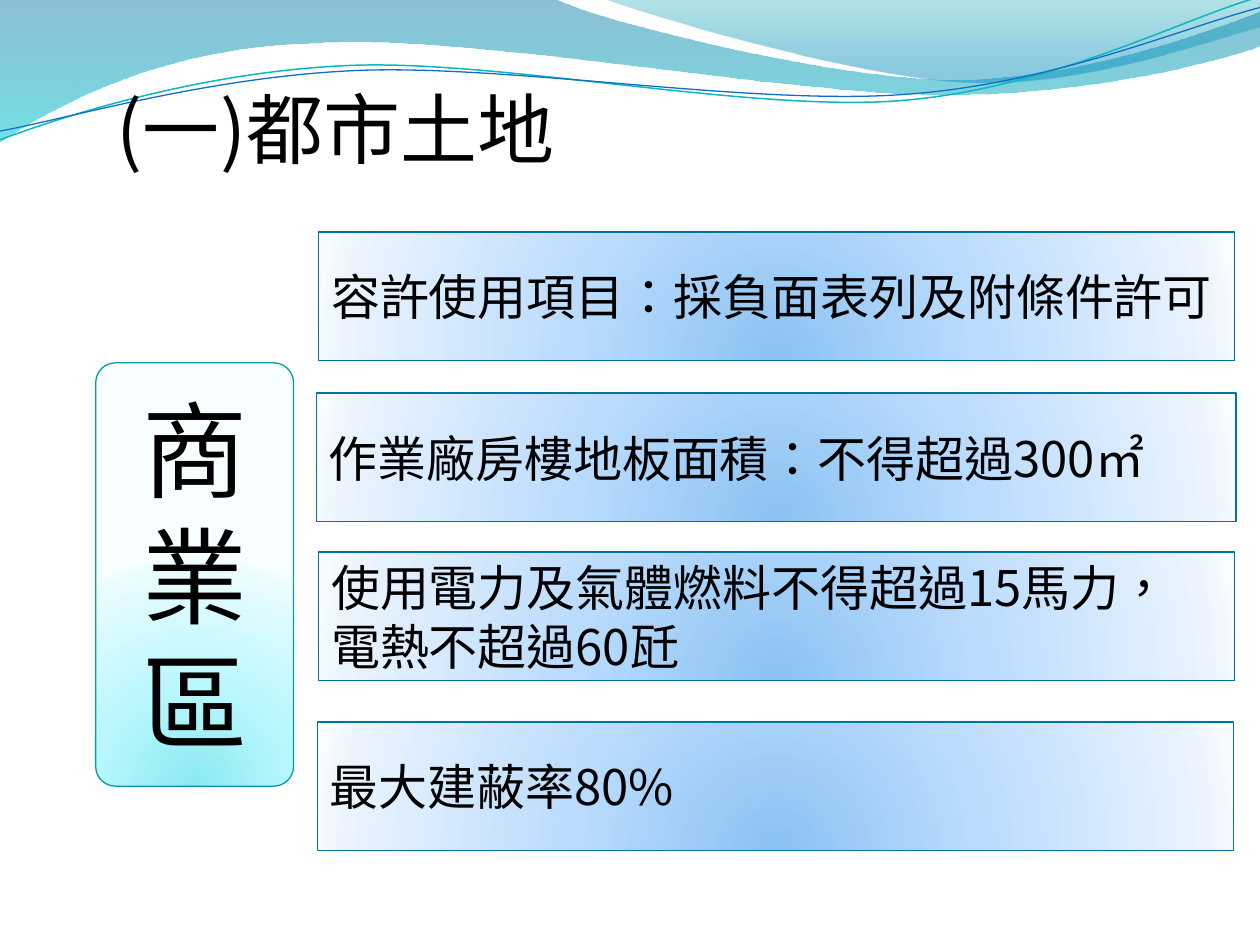
import math
from dataclasses import dataclass

from lxml import etree
from pptx import Presentation
from pptx import util as u
from pptx.dml.color import RGBColor
from pptx.enum import shapes, text
from pptx.oxml.ns import qn

WIDTH, HEIGHT = u.Inches(10), u.Inches(7.5)
FONT = "Noto Sans CJK SC"
RADIAL_STOPS = (0, 43, 93, 100)


@dataclass
class Wave:
    """Points in inches: a pair is a corner, six numbers are a Bézier segment."""
    points: list
    stops: tuple = ()  # (position %, colour, opacity %)
    line: str = ""
    weight: float = 0
    tilt: float = 0  # degrees clockwise
    pivot: tuple = (0, 0)


@dataclass
class Card:
    left: float
    top: float
    width: float
    height: float
    lines: list
    size: int = 28
    colours: tuple = ("8BC2F1", "B9DBFD", "EAF3FE", "F8FBFF")
    line: str = "0074A1"
    kind: int = shapes.MSO_SHAPE.RECTANGLE
    align: int = text.PP_ALIGN.LEFT


WAVES = [
    Wave([(0, 0), (4.4, -0.01), (4.76, 0.17, 6.64, 0.63, 7.58, 0.63),
          (8.53, 0.63, 9.58, 0.26, 10, 0.09), (10.01, 0.36),
          (9.83, 0.44, 8.7, 0.76, 7.46, 0.75), (6.22, 0.75, 3.82, 0.28, 2.57, 0.34),
          (1.29, 0.36, 0.46, 0.83, -0.01, 1.13), (0, 0)],
         stops=((0, "0074A1", 45), (100, "00C6CF", 55))),
    Wave([(4.79, -0.01), (5.09, 0.11, 6.82, 0.62, 7.69, 0.65),
          (8.56, 0.69, 9.61, 0.32, 10, 0.21), (10, 0), (4.79, -0.01)],
         stops=((0, "00A1A9", 30), (80, "008BBF", 45))),
    Wave([(0, 1.11), (0.48, 0.93, 1.58, 0.57, 2.77, 0.52),
          (3.95, 0.47, 5.93, 0.89, 7.13, 0.8), (8.33, 0.71, 9.38, 0.15, 9.98, -0.02)],
         line="0AB8BF", weight=0.85, tilt=-2.7, pivot=(4.99, 0.57)),
    Wave([(0, 1.04), (0.47, 0.96, 1.64, 0.61, 2.83, 0.56),
          (4.03, 0.51, 5.97, 0.84, 7.17, 0.75), (8.36, 0.67, 9.41, 0.21, 10, 0.06)],
         line="0F6FC6", weight=0.75, tilt=-2.7, pivot=(5, 0.59)),
]

CARDS = [
    Card(0.76, 2.88, 1.57, 3.36, ["商", "業", "區"], 60,
         ("8BE9F1", "B9F7FD", "EAFCFE", "F8FEFF"), "069CA3",
         shapes.MSO_SHAPE.ROUNDED_RECTANGLE, text.PP_ALIGN.CENTER),
    Card(2.53, 1.84, 7.27, 1.02, ["容許使用項目：採負面表列及附條件許可"]),
    Card(2.51, 3.12, 7.3, 1.02, ["作業廠房樓地板面積：不得超過300㎡"]),
    Card(2.53, 4.38, 7.27, 1.02, ["使用電力及氣體燃料不得超過15馬力，", "電熱不超過60瓩"]),
    Card(2.52, 5.73, 7.27, 1.02, ["最大建蔽率80%"]),
]


def colour(value: str) -> RGBColor:
    return RGBColor.from_string(value)


def across(inches: float) -> int:
    return round(WIDTH * inches / 10)


def down(inches: float) -> int:
    return round(HEIGHT * inches / 7.5)


def set_gradient(shape, stops, radial: bool = False) -> None:
    """Replace a solid fill by a gradient, top to bottom or radial from below."""
    shape.fill.solid()
    solid = shape._element.spPr.find(qn("a:solidFill"))
    gradient = etree.Element(qn("a:gradFill"), rotWithShape="1")
    stop_list = etree.SubElement(gradient, qn("a:gsLst"))
    for position, value, opacity in stops:
        stop = etree.SubElement(stop_list, qn("a:gs"), pos=str(position * 1000))
        tint = etree.SubElement(stop, qn("a:srgbClr"), val=value)
        if opacity < 100:
            etree.SubElement(tint, qn("a:alpha"), val=str(opacity * 1000))
    if radial:
        circle = etree.SubElement(gradient, qn("a:path"), path="circle")
        etree.SubElement(circle, qn("a:fillToRect"),
                         l="50000", t="130000", r="50000", b="-30000")
    else:
        etree.SubElement(gradient, qn("a:lin"), ang="5400000", scaled="1")
    solid.getparent().replace(solid, gradient)


def level(wave: Wave, x: float, y: float) -> tuple:
    """Position of a point before the wave is tilted about its pivot."""
    angle = math.radians(-wave.tilt)
    dx, dy = x - wave.pivot[0], y - wave.pivot[1]
    return (across(wave.pivot[0] + dx * math.cos(angle) - dy * math.sin(angle)),
            down(wave.pivot[1] + dx * math.sin(angle) + dy * math.cos(angle)))


def draw_wave(slide, wave: Wave) -> None:
    segments = [[level(wave, *point[i:i + 2]) for i in range(0, len(point), 2)]
                for point in wave.points]
    builder = slide.shapes.build_freeform(*segments[0][0])
    builder.add_line_segments([segment[-1] for segment in segments[1:]],
                              close=bool(wave.stops))
    shape = builder.convert_to_shape()

    # Bend the straight segments that have control points
    straight = list(shape._element.iter(qn("a:lnTo")))
    for element, segment in zip(straight, segments[1:]):
        if len(segment) == 3:
            curve = etree.Element(qn("a:cubicBezTo"))
            for x, y in segment:
                etree.SubElement(curve, qn("a:pt"),
                                 x=str(x - shape.left), y=str(y - shape.top))
            element.getparent().replace(element, curve)

    shape.rotation = wave.tilt
    shape.shadow.inherit = False
    if wave.stops:
        set_gradient(shape, wave.stops)
        shape.line.fill.background()
    else:
        shape.fill.background()
        shape.line.color.rgb = colour(wave.line)
        shape.line.width = u.Pt(wave.weight)


def write(frame, lines, size: int, align) -> None:
    frame.word_wrap = True
    for index, line in enumerate(lines):
        paragraph = frame.paragraphs[0] if index == 0 else frame.add_paragraph()
        run = paragraph.add_run()
        run.text = line
        paragraph.alignment = align
        paragraph.font.size = u.Pt(size)
        paragraph.font.name = FONT
        paragraph.font.color.rgb = colour("000000")
        # Traditional Chinese glyph forms and East Asian typeface
        properties = run._r.get_or_add_rPr()
        properties.set("lang", "zh-TW")
        etree.SubElement(properties, qn("a:ea"), typeface=FONT)


def draw_card(slide, card: Card) -> None:
    shape = slide.shapes.add_shape(card.kind, across(card.left), down(card.top),
                                   across(card.width), down(card.height))
    if card.kind == shapes.MSO_SHAPE.ROUNDED_RECTANGLE:
        shape.adjustments[0] = 0.1
    shape.shadow.inherit = False
    set_gradient(shape, [(position, value, 100)
                         for position, value in zip(RADIAL_STOPS, card.colours)], radial=True)
    shape.line.color.rgb = colour(card.line)
    shape.line.width = u.Pt(0.75)
    shape.text_frame.vertical_anchor = text.MSO_ANCHOR.MIDDLE
    write(shape.text_frame, card.lines, card.size, card.align)


def main() -> None:
    presentation = Presentation()
    presentation.slide_width, presentation.slide_height = WIDTH, HEIGHT
    slide = presentation.slides.add_slide(presentation.slide_layouts[6])

    # Wave decoration along the top
    for wave in WAVES:
        draw_wave(slide, wave)

    # Heading
    heading = slide.shapes.add_textbox(across(0.83), down(0.6), across(8.83), down(6.61))
    write(heading.text_frame, ["(一)都市土地"], 44, text.PP_ALIGN.LEFT)
    heading.text_frame.paragraphs[0].space_before = u.Pt(8.8)

    # Zone label and its rules
    for card in CARDS:
        draw_card(slide, card)

    presentation.save("out.pptx")


if __name__ == "__main__":
    main()
